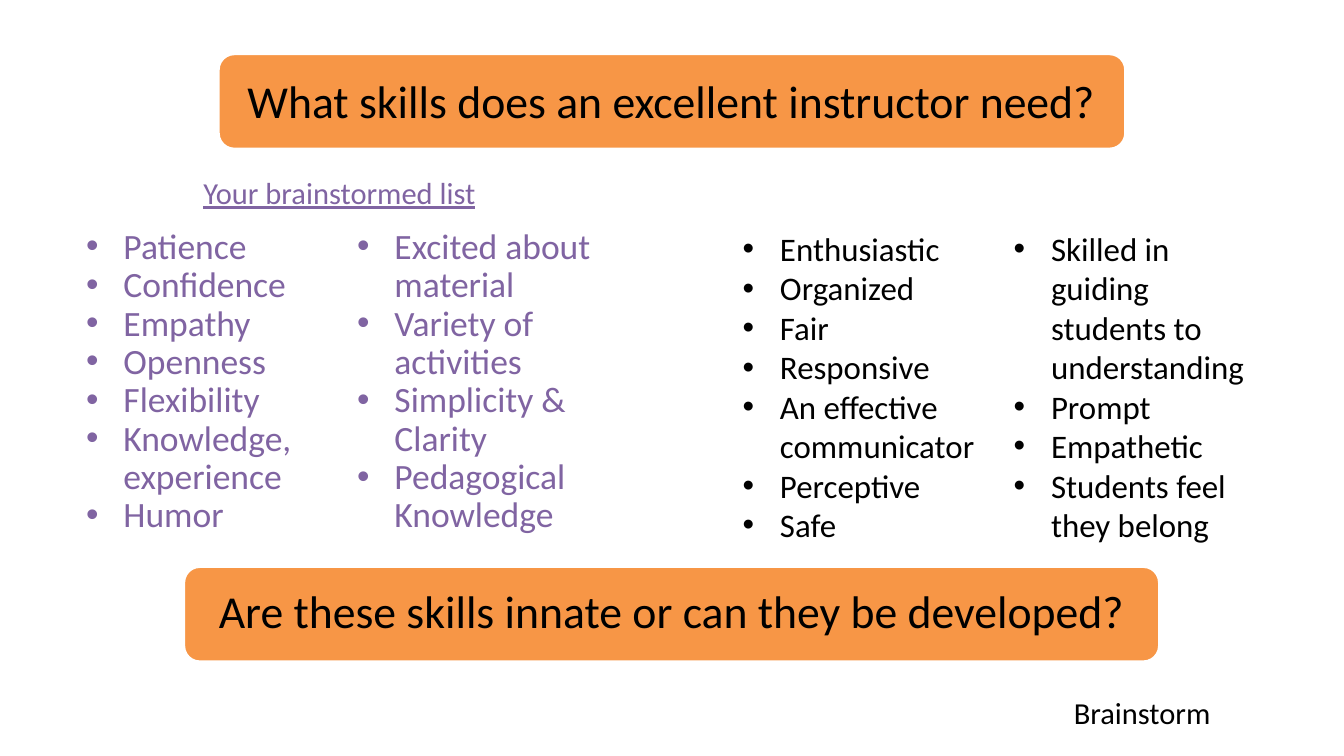
from pptx import Presentation
from pptx.dml.color import RGBColor
from pptx.enum.shapes import MSO_SHAPE
from pptx.enum.text import MSO_ANCHOR, MSO_AUTO_SIZE, PP_ALIGN
from pptx.util import Cm, Pt

COLORS = {"orange": "F79646", "white": "FFFFFF", "black": "000000", "purple": "8064A2"}
FONT = "Calibri"
COMPARISON_LAYOUT = 4
BANNER_HEIGHT = 2.64
LIST_TOP, LIST_WIDTH, LIST_HEIGHT = 6.2, 15.62, 9.4

CLASS_SKILLS = [
    "Patience", "Confidence", "Empathy", "Openness", "Flexibility",
    "Knowledge, experience", "Humor", "Excited about material",
    "Variety of activities", "Simplicity & Clarity", "Pedagogical Knowledge",
]
EXPECTED_SKILLS = [
    "Enthusiastic", "Organized", "Fair", "Responsive",
    "An effective communicator", "Perceptive", "Safe",
    "Skilled in guiding students to understanding", "Prompt", "Empathetic",
    "Students feel they belong",
]


def color(name):
    """Return the named palette colour."""
    return RGBColor.from_string(COLORS[name])


def write(shape, *lines, size=24, ink="black", align=PP_ALIGN.LEFT,
          anchor=MSO_ANCHOR.TOP, spacing=1.0, underline=False):
    """Fill a shape with formatted paragraphs, one for each line."""
    frame = shape.text_frame
    frame.auto_size = MSO_AUTO_SIZE.NONE
    frame.word_wrap = True
    frame.vertical_anchor = anchor
    frame.margin_left = frame.margin_right = Cm(0.28)
    frame.margin_top = frame.margin_bottom = Cm(0.15)
    frame.text = "\n".join(lines)
    for paragraph in frame.paragraphs:
        paragraph.alignment = align
        paragraph.line_spacing = spacing
        paragraph.space_before = paragraph.space_after = Pt(0)
        font = paragraph.runs[0].font
        font.name, font.size = FONT, Pt(size)
        font.bold, font.underline = False, underline
        font.color.rgb = color(ink)


class SkillsSlide:
    """Hold the current slide and add its elements in one style."""

    def __init__(self, deck):
        self.slide = deck.slides.add_slide(deck.slide_layouts[COMPARISON_LAYOUT])

    def banner(self, left, top, width):
        """Add a rounded orange banner behind the text and return it."""
        banner = self.slide.shapes.add_shape(
            MSO_SHAPE.ROUNDED_RECTANGLE, Cm(left), Cm(top), Cm(width), Cm(BANNER_HEIGHT))
        banner.shadow.inherit = False
        banner.fill.solid()
        banner.fill.fore_color.rgb = color("orange")
        banner.line.color.rgb = color("white")
        banner.line.width = Pt(2)
        banner.element.getparent().insert(2, banner.element)
        return banner

    def placeholder(self, idx, left, top, width, height, *lines, **style):
        """Move a placeholder, fill it and return it."""
        holder = self.slide.placeholders[idx]
        holder.left, holder.top = Cm(left), Cm(top)
        holder.width, holder.height = Cm(width), Cm(height)
        write(holder, *lines, **style)
        return holder

    def skill_list(self, idx, left, skills, **style):
        """Fill a placeholder with a two-column bulleted list."""
        holder = self.placeholder(
            idx, left, LIST_TOP, LIST_WIDTH, LIST_HEIGHT, *skills, **style)
        body = holder.element.txBody.bodyPr
        body.set("numCol", "2")
        body.set("spcCol", "0")
        for paragraph in holder.text_frame.paragraphs:
            indents = paragraph._p.get_or_add_pPr()
            indents.set("marL", str(Cm(1.55)))
            indents.set("indent", str(-Cm(1.04)))


def main():
    """Build the slide and save it."""
    deck = Presentation()
    deck.slide_width, deck.slide_height = Cm(37.34), Cm(21.01)
    skills = SkillsSlide(deck)

    skills.banner(6.07, 1.5, 25.2)
    skills.placeholder(0, 1.85, 0.97, 33.6, 2.74,
                       "What skills does an excellent instructor need?",
                       size=36, align=PP_ALIGN.CENTER, anchor=MSO_ANCHOR.BOTTOM)
    closing_question = skills.banner(5.11, 15.75, 27.1)
    write(closing_question, "Are these skills innate or can they be developed?",
          size=36, align=PP_ALIGN.CENTER, anchor=MSO_ANCHOR.MIDDLE, spacing=0.9)

    skills.placeholder(1, 3.12, 4.78, 12.62, 1.22, "Your brainstormed list",
                       ink="purple", align=PP_ALIGN.CENTER, spacing=0.93, underline=True)
    skills.skill_list(2, 1.6, CLASS_SKILLS, size=28, ink="purple", spacing=0.9)
    skills.skill_list(4, 19.84, EXPECTED_SKILLS, size=25.9)
    skills.placeholder(3, 29.26, 19.13, 4.65, 1.35, "Brainstorm", align=PP_ALIGN.RIGHT)

    deck.save("out.pptx")


if __name__ == "__main__":
    main()
